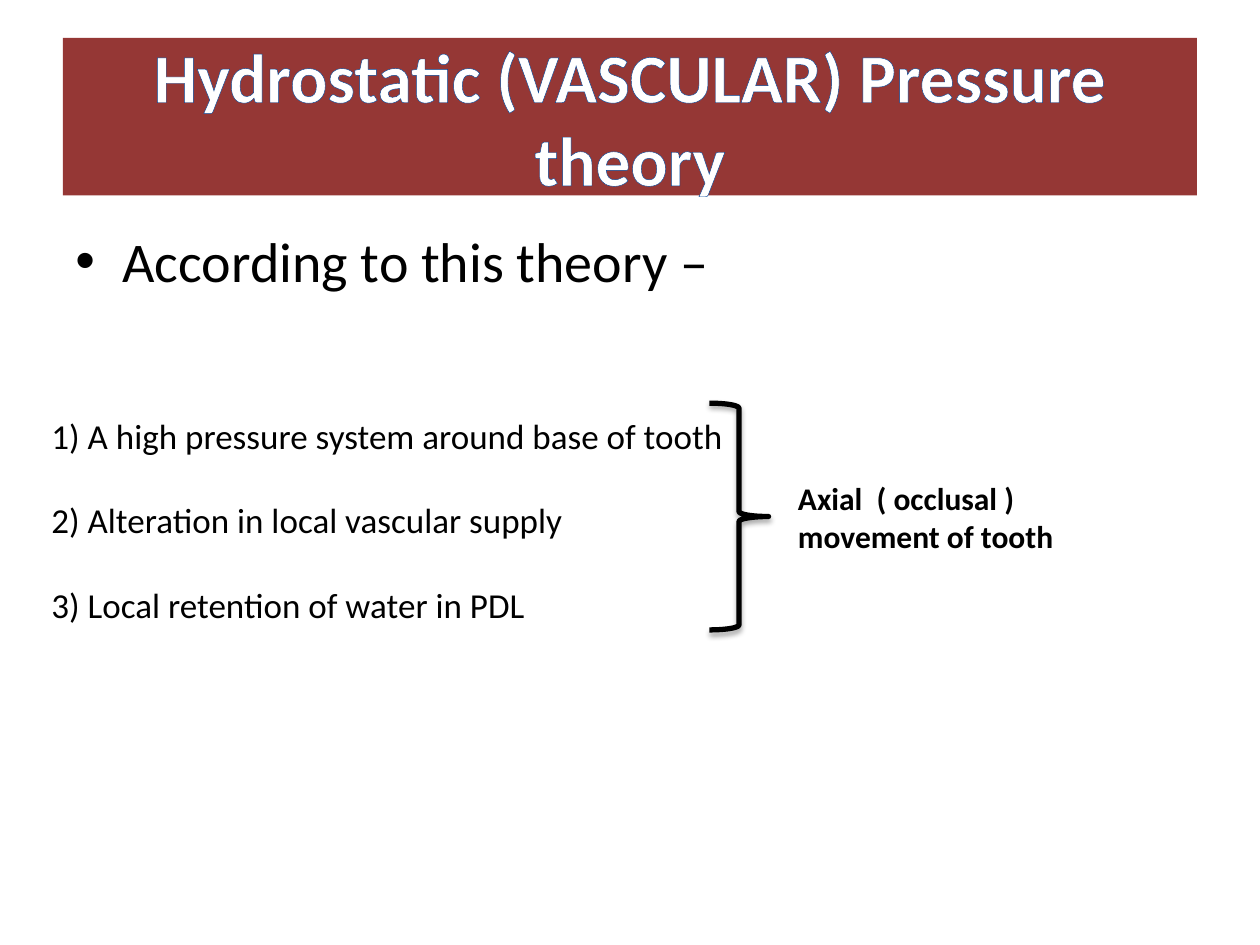
from lxml import etree
from pptx import Presentation
from pptx.dml.color import RGBColor
from pptx.enum import shapes, text
from pptx.oxml import parse_xml
from pptx.oxml.ns import qn
from pptx.util import Pt

FONT = "Calibri"
HUES = {"band": "953735", "white": "FFFFFF", "black": "000000", "edge": "054697"}
NS = 'xmlns:a="http://schemas.openxmlformats.org/drawingml/2006/main"'

TITLE = "Hydrostatic (VASCULAR) Pressure theory"
LEAD = "According to this theory –"
CAUSES = [
    "A high pressure system around base of tooth",
    "Alteration in local vascular supply",
    "Local retention of water in PDL",
]
RESULT = "Axial  ( occlusal ) movement of tooth"
HANG = 27
GAP = 24.4


def hue(name):
    return RGBColor.from_string(HUES[name])


def lay(box):
    return [Pt(n) for n in box]


def write(shape, lines, size, color="black", bold=False, gap=0,
          left=0, first=0, align=text.PP_ALIGN.LEFT):
    frame = shape.text_frame
    frame.word_wrap = True
    for i, line in enumerate(lines):
        para = frame.add_paragraph() if i else frame.paragraphs[0]
        para.alignment = align
        if i:
            para.space_before = Pt(gap)
        props = para._p.get_or_add_pPr()
        props.set("marL", str(Pt(left)))
        props.set("indent", str(Pt(first)))
        run = para.add_run()
        run.text = line
        font = run.font
        font.name, font.size, font.bold = FONT, Pt(size), bold
        font.color.rgb = hue(color)
    return frame


deck = Presentation()
deck.slide_width, deck.slide_height = Pt(720), Pt(540)
slide = deck.slides.add_slide(deck.slide_layouts[6])
items = slide.shapes

band = items.add_shape(shapes.MSO_SHAPE.RECTANGLE, *lay((36, 21.6, 648, 90)))
band.shadow.inherit = False
band.fill.solid()
band.fill.fore_color.rgb = hue("band")
band.line.fill.background()
frame = write(band, [TITLE], 39.6, "white", True, align=text.PP_ALIGN.CENTER)
frame.vertical_anchor = text.MSO_ANCHOR.MIDDLE
font = frame.paragraphs[0].runs[0].font
font._element.insert(0, parse_xml(
    f'<a:ln {NS} w="{Pt(1)}"><a:solidFill><a:srgbClr val="{HUES["edge"]}"/>'
    '</a:solidFill></a:ln>'))

body = items.add_textbox(*lay((36, 126, 648, 356.4)))
frame = write(body, [LEAD], 32, left=HANG, first=-HANG)
props = frame.paragraphs[0]._p.get_or_add_pPr()
etree.SubElement(props, qn("a:buFont")).set("typeface", "Arial")
etree.SubElement(props, qn("a:buChar")).set("char", "•")

causes = items.add_textbox(*lay((22.3, 211, 416.2, 150.5)))
steps = [f"{n}) {cause}" for n, cause in enumerate(CAUSES, 1)]
frame = write(causes, steps, 20, gap=GAP, left=HANG, first=-HANG)
frame.margin_top = Pt(25.6)

brace = items.add_shape(shapes.MSO_SHAPE.RIGHT_BRACE, *lay((405.4, 230.4, 33.8, 129.6)))
brace.shadow.inherit = False
brace.fill.background()
brace.line.color.rgb = hue("black")
brace.line.width = Pt(3)
glow = brace._element.spPr.find(qn("a:effectLst"))
glow.append(parse_xml(
    f'<a:outerShdw {NS} blurRad="{Pt(3.1)}" dist="{Pt(1.8)}" dir="5400000" rotWithShape="0">'
    f'<a:srgbClr val="{HUES["black"]}"><a:alpha val="35000"/></a:srgbClr></a:outerShdw>'))

result = items.add_textbox(*lay((421.9, 270, 225.4, 51.1)))
write(result, [RESULT], 18, bold=True, left=HANG)

deck.save("out.pptx")
